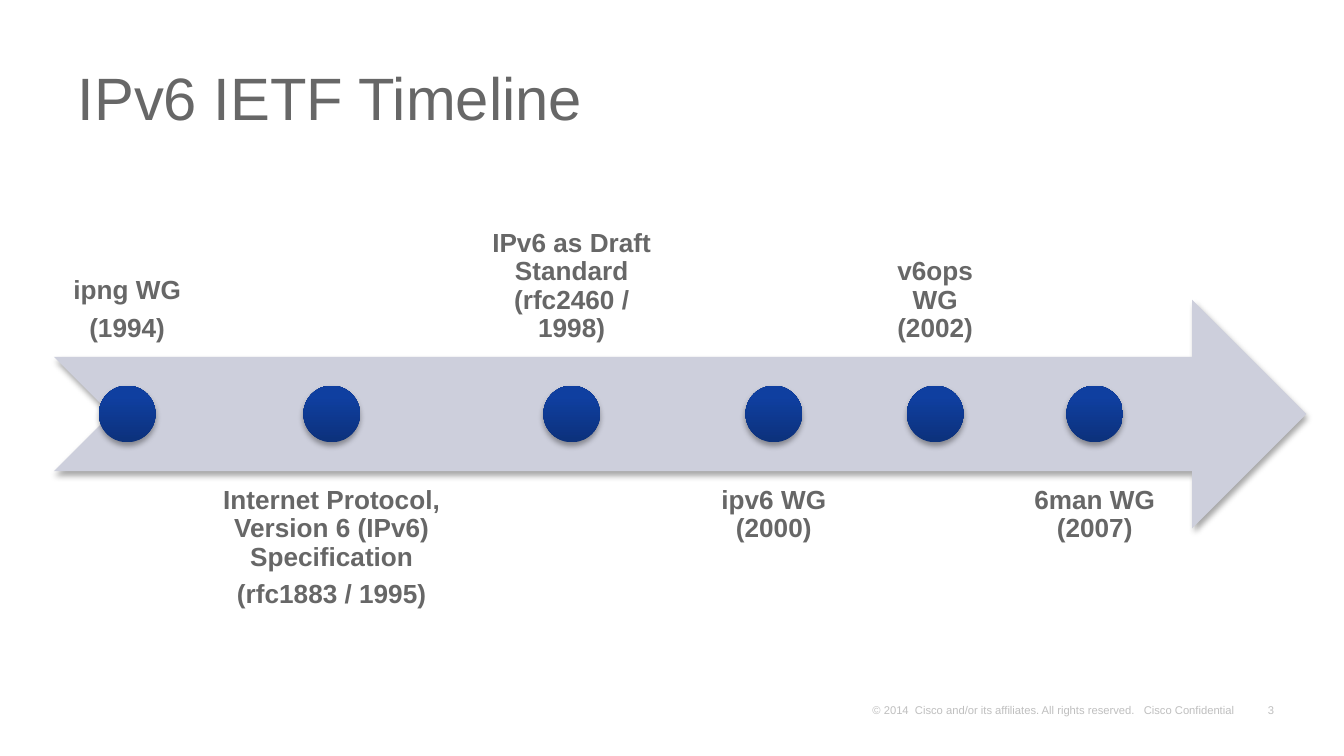
from lxml import etree
from pptx import Presentation
from pptx.dml.color import RGBColor
from pptx.enum.shapes import MSO_SHAPE
from pptx.enum.text import MSO_ANCHOR, PP_ALIGN
from pptx.oxml.ns import qn
from pptx.util import Cm, Pt

ARROW, DOT = MSO_SHAPE.NOTCHED_RIGHT_ARROW, MSO_SHAPE.OVAL
TOP, MIDDLE, BOTTOM = MSO_ANCHOR.TOP, MSO_ANCHOR.MIDDLE, MSO_ANCHOR.BOTTOM
LEFT, CENTER, RIGHT = PP_ALIGN.LEFT, PP_ALIGN.CENTER, PP_ALIGN.RIGHT

GREY, PALE_GREY = "676767", "BFBFBF"
TIMELINE_LEFT, TIMELINE_WIDTH = 1.02, 23.67
BAND_HEIGHT = 4.32
ARROW_TOP = 5.66
ABOVE_TOP, BELOW_TOP = 2.44, 8.92
LABEL_GAP = 0.09
DOT_SIZE = 1.07

# Label width in cm and its paragraphs; labels alternate above and below.
MILESTONES = [
    (2.77, ["ipng WG", "(1994)"]),
    (4.78, ["Internet Protocol, Version 6 (IPv6) Specification",
            "(rfc1883 / 1995)"]),
    (4.11, ["IPv6 as Draft Standard (rfc2460 / 1998)"]),
    (3.35, ["ipv6 WG (2000)"]),
    (2.57, ["v6ops WG (2002)"]),
    (3.28, ["6man WG (2007)"]),
]

TITLE = {
    "frame": {"vertical_anchor": MIDDLE, "word_wrap": True},
    "insets": (0.25, 0.13),
    "paragraph": {"alignment": LEFT, "line_spacing": 0.8},
    "font": {"size": Pt(32)},
    "color": GREY,
}
LABEL = {
    "frame": {"word_wrap": True},
    "insets": (0.28, 0.28),
    "paragraph": {"alignment": CENTER, "line_spacing": 0.9,
                  "space_after": Pt(5)},
    "font": {"size": Pt(14), "bold": True},
    "color": GREY,
}
FOOTER = {
    "frame": {"vertical_anchor": BOTTOM, "word_wrap": True},
    "insets": (0.18, 0.08),
    "paragraph": {"alignment": LEFT},
    "font": {"size": Pt(6)},
    "color": PALE_GREY,
}
PAGE_NUMBER = {
    **FOOTER,
    "frame": {"vertical_anchor": BOTTOM, "word_wrap": False},
    "paragraph": {"alignment": RIGHT},
}


def rgb(color):
    return RGBColor.from_string(color)


def apply(target, values):
    for name, value in values.items():
        setattr(target, name, value)


def add_text(slide, box, paragraphs, style, anchor=None):
    frame = slide.shapes.add_textbox(*map(Cm, box)).text_frame
    apply(frame, style["frame"])
    if anchor is not None:
        frame.vertical_anchor = anchor
    side, edge = map(Cm, style["insets"])
    apply(frame, {"margin_left": side, "margin_right": side,
                  "margin_top": edge, "margin_bottom": edge})
    for index, text in enumerate(paragraphs):
        paragraph = frame.add_paragraph() if index else frame.paragraphs[0]
        apply(paragraph, style["paragraph"])
        run = paragraph.add_run()
        run.text = text
        apply(run.font, {"name": "Arial", **style["font"]})
        run.font.color.rgb = rgb(style["color"])


def add_shadowed_shape(slide, preset, box):
    """Add an outline-free shape with a soft shadow straight below it."""
    shape = slide.shapes.add_shape(preset, *map(Cm, box))
    shape.line.fill.background()
    shape.shadow.inherit = False
    effects = shape._element.spPr.find(qn("a:effectLst"))
    shadow = etree.SubElement(
        effects, qn("a:outerShdw"), blurRad=str(Pt(3.1)), dist=str(Pt(1.8)),
        dir="5400000", rotWithShape="0")
    shade = etree.SubElement(shadow, qn("a:srgbClr"), val="000000")
    etree.SubElement(shade, qn("a:alpha"), val="35000")
    return shape


def add_arrow(slide):
    arrow = add_shadowed_shape(
        slide, ARROW, (TIMELINE_LEFT, ARROW_TOP, TIMELINE_WIDTH, BAND_HEIGHT))
    arrow.fill.solid()
    arrow.fill.fore_color.rgb = rgb("CDCFDC")


def add_dot(slide, center):
    top = ARROW_TOP + (BAND_HEIGHT - DOT_SIZE) / 2
    dot = add_shadowed_shape(
        slide, DOT, (center - DOT_SIZE / 2, top, DOT_SIZE, DOT_SIZE))
    dot.fill.gradient()
    dot.fill.gradient_angle = 90
    stops = [(0, "0C317B"), (0.8, "0F3FA0")]
    for stop, (position, color) in zip(dot.fill.gradient_stops, stops):
        stop.position = position
        stop.color.rgb = rgb(color)


def add_milestones(slide):
    left = TIMELINE_LEFT
    for index, (width, paragraphs) in enumerate(MILESTONES):
        top, anchor = (BELOW_TOP, TOP) if index % 2 else (ABOVE_TOP, BOTTOM)
        add_text(slide, (left, top, width, BAND_HEIGHT), paragraphs, LABEL,
                 anchor)
        add_dot(slide, left + width / 2)
        left += width + LABEL_GAP


def main():
    presentation = Presentation()
    presentation.slide_width = Cm(25.4)
    presentation.slide_height = Cm(14.28)
    slide = presentation.slides.add_slide(presentation.slide_layouts[6])

    add_text(slide, (23.65, 13.18, 0.61, 0.43), ["3"], PAGE_NUMBER)
    add_text(slide, (16.31, 13.18, 7.39, 0.43),
             ["© 2014  Cisco and/or its affiliates. All rights reserved.   "
              "Cisco Confidential"], FOOTER)
    add_arrow(slide)
    add_milestones(slide)
    add_text(slide, (1.22, 0.94, 23.19, 2.03), ["IPv6 IETF Timeline"], TITLE)

    presentation.save("out.pptx")


if __name__ == "__main__":
    main()
